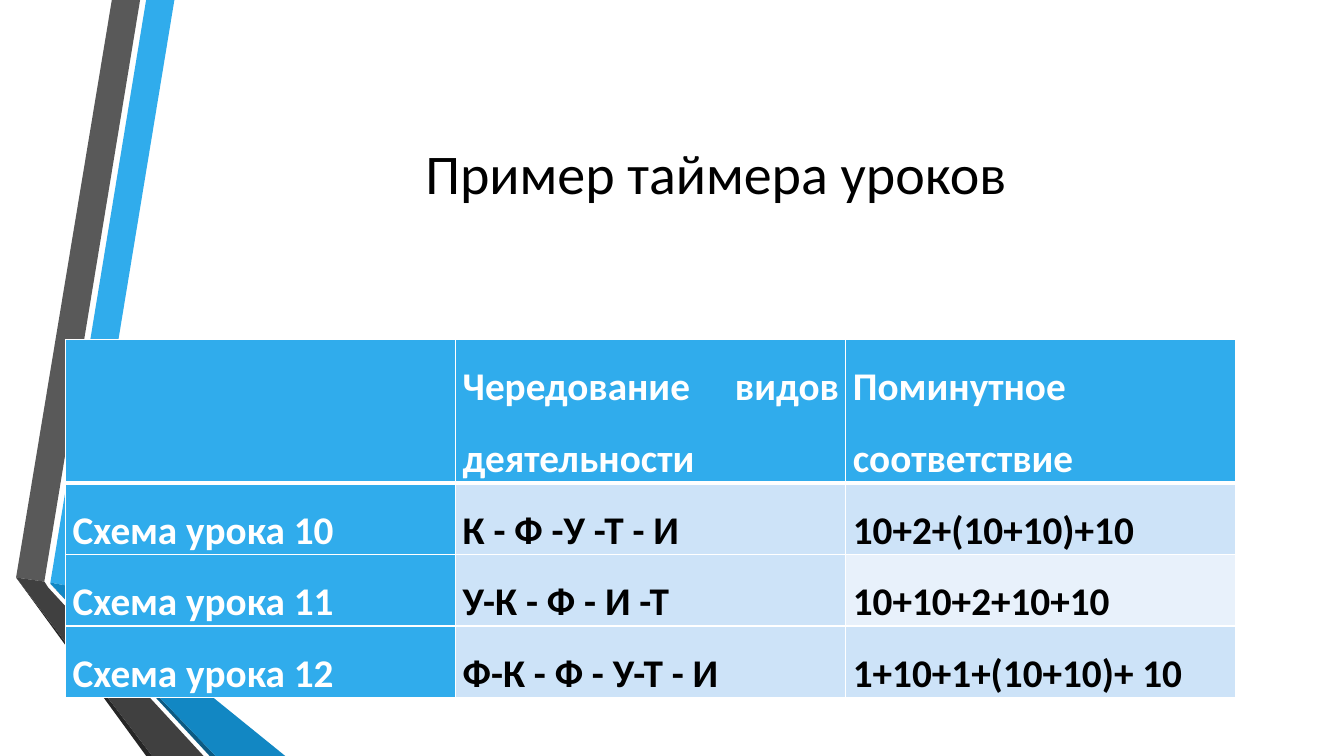
from pptx import Presentation
from pptx.dml.color import RGBColor
from pptx.enum.text import MSO_ANCHOR, PP_ALIGN
from pptx.oxml import parse_xml
from pptx.oxml.ns import nsdecls
from pptx.util import Pt

PX = 9144  # 100 px to the inch
THEME = {
    "font": "Calibri", "title_size": 40, "cell_size": 28,
    "black": "000000", "white": "FFFFFF",
    "blue": "30ACEC", "blue_fold": "1287C3", "blue_edge": "0C5A82",
    "grey": "595959", "grey_fold": "404040", "grey_edge": "262626",
    "band": "CDE3F8", "band_light": "E8F1FB",
}


def style_text(para, size, color, bold=False):
    for span in para.runs:
        span.font.name = THEME["font"]
        span.font.size = Pt(THEME[size])
        span.font.bold = bold
        span.font.color.rgb = RGBColor.from_string(THEME[color])


def add_border(cell, side, points):
    cell._tc.get_or_add_tcPr().append(parse_xml(
        f'<a:{side} {nsdecls("a")} w="{Pt(points)}"><a:solidFill>'
        f'<a:srgbClr val="{THEME["white"]}"/></a:solidFill></a:{side}>'))


deck = Presentation()
deck.slide_width, deck.slide_height = 1333 * PX, 750 * PX
page = deck.slides.add_slide(deck.slide_layouts[6])

# Folded ribbons on the left
ribbons = [
    ("blue", [(50, 578), (77, 583), (173, 0), (145, 0)]),
    ("grey", [(139, 0), (111, 0), (16, 573), (44, 577)]),
    ("grey_edge", [(16, 573), (145, 750), (151, 750)]),
    ("blue_edge", [(50, 579), (208, 750), (214, 750)]),
    ("blue_fold", [(50, 578), (50, 579), (214, 750), (283, 750), (77, 583)]),
    ("grey_fold", [(16, 573), (151, 750), (202, 750), (48, 583), (44, 577)]),
]
for color, points in ribbons:
    outline = page.shapes.build_freeform(*points[0], scale=PX)
    outline.add_line_segments(points[1:], close=True)
    ribbon = outline.convert_to_shape()
    ribbon.shadow.inherit = False
    ribbon.fill.solid()
    ribbon.fill.fore_color.rgb = RGBColor.from_string(THEME[color])
    ribbon.line.fill.background()

# Title
title = page.shapes.add_textbox(162 * PX, 75 * PX, 1096 * PX, 192 * PX)
title.text_frame.word_wrap = True
title.text_frame.vertical_anchor = MSO_ANCHOR.MIDDLE
title.text_frame.text = "Пример таймера уроков"
title_para = title.text_frame.paragraphs[0]
title_para.alignment = PP_ALIGN.CENTER
style_text(title_para, "title_size", "black")

# Lesson timer table
lessons = [
    ("", "Чередование видов деятельности", "Поминутное соответствие"),
    ("Схема урока 10", "К - Ф -У -Т - И", "10+2+(10+10)+10"),
    ("Схема урока 11", "У-К - Ф - И -Т", "10+10+2+10+10"),
    ("Схема урока 12", "Ф-К - Ф - У-Т - И", "1+10+1+(10+10)+ 10"),
]
row_heights = [142, 71, 71, 71]
table = page.shapes.add_table(len(lessons), 3, 65 * PX, 337 * PX,
                              1161 * PX, sum(row_heights) * PX).table
for column in table.columns:
    column.width = 387 * PX
for row, height in zip(table.rows, row_heights):
    row.height = height * PX

for row_index, lesson in enumerate(lessons):
    for column_index, text in enumerate(lesson):
        cell = table.cell(row_index, column_index)
        heading = row_index == 0 or column_index == 0
        cell.margin_left = cell.margin_right = 7 * PX
        cell.margin_top = cell.margin_bottom = 0

        cell.text_frame.text = text
        para = cell.text_frame.paragraphs[0]
        para.alignment = PP_ALIGN.JUSTIFY
        para.line_spacing = 1.5
        style_text(para, "cell_size", "white" if heading else "black", bold=True)

        # Borders come before the fill in the cell properties
        add_border(cell, "lnL", 1)
        add_border(cell, "lnR", 1)
        add_border(cell, "lnT", 3 if row_index == 1 else 1)
        add_border(cell, "lnB", 3 if row_index == 0 else 1)

        if heading:
            fill = "blue"
        elif (row_index, column_index) == (2, 2):
            fill = "band_light"
        else:
            fill = "band"
        cell.fill.solid()
        cell.fill.fore_color.rgb = RGBColor.from_string(THEME[fill])

deck.save("out.pptx")
